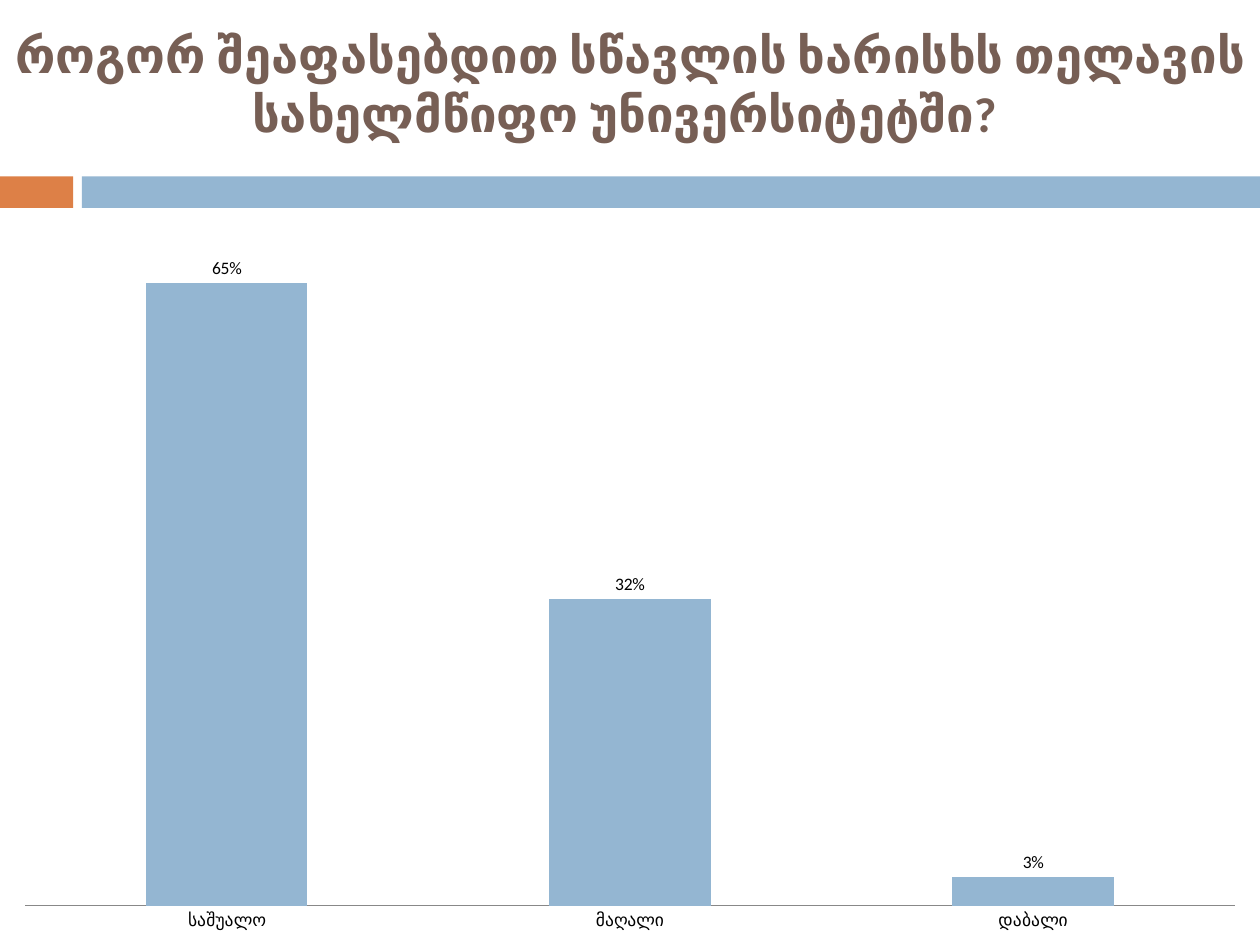
from pptx import Presentation
from pptx.chart.data import CategoryChartData
from pptx.dml.color import RGBColor
from pptx.enum import chart as charts, shapes, text
from pptx.util import Inches, Pt

# Content
TITLE = "როგორ შეაფასებდით სწავლის ხარისხს თელავის სახელმწიფო უნივერსიტეტში? "
RATINGS = {"საშუალო": 0.65, "მაღალი": 0.32, "დაბალი": 0.03}

# Style
FONT = "Calibri"
ORANGE = RGBColor(0xDD, 0x80, 0x47)
BLUE = RGBColor(0x94, 0xB6, 0xD2)
BROWN = RGBColor(0x77, 0x5F, 0x55)
BLACK = RGBColor(0, 0, 0)
GREY = RGBColor(0x88, 0x88, 0x88)
WIDTH, HEIGHT = 10, 7.5
BAND_TOP, BAND_HEIGHT = 1.4, 0.25
BANDS = [(0, 0.58, ORANGE), (0.65, WIDTH, BLUE)]  # left, right, colour
CHART_TOP = 1.75


def set_format(target, color, **values):
    for name, value in values.items():
        setattr(target, name, value)
    target.color.rgb = color


presentation = Presentation()
presentation.slide_width, presentation.slide_height = Inches(WIDTH), Inches(HEIGHT)
slide = presentation.slides.add_slide(presentation.slide_layouts[5])

# Divider bands
for left, right, color in BANDS:
    band = slide.shapes.add_shape(
        shapes.MSO_SHAPE.RECTANGLE, Inches(left), Inches(BAND_TOP),
        Inches(right - left), Inches(BAND_HEIGHT))
    band.shadow.inherit = False
    band.fill.solid()
    band.fill.fore_color.rgb = color
    band.line.fill.background()

# Title
title = slide.shapes.title
title.left, title.top = Inches(0), Inches(0)
title.width, title.height = Inches(WIDTH), Inches(1.33)
frame = title.text_frame
frame.text = TITLE
frame.word_wrap = True
frame.auto_size = text.MSO_AUTO_SIZE.NONE
frame.vertical_anchor = text.MSO_ANCHOR.MIDDLE
paragraph = frame.paragraphs[0]
paragraph.alignment = text.PP_ALIGN.CENTER
set_format(paragraph.runs[0].font, BROWN, name=FONT, size=Pt(28), bold=True)

# Column chart
data = CategoryChartData(number_format="0%")
data.categories = list(RATINGS)
data.add_series("Series 1", list(RATINGS.values()))
chart = slide.shapes.add_chart(
    charts.XL_CHART_TYPE.COLUMN_CLUSTERED, Inches(0), Inches(CHART_TOP),
    Inches(WIDTH), Inches(HEIGHT - CHART_TOP), data).chart
chart.has_legend = False
chart.has_title = False
set_format(chart.font, BLACK, name=FONT, size=Pt(10))

plot = chart.plots[0]
plot.gap_width, plot.overlap = 150, -25
plot.vary_by_categories = False
fill = plot.series[0].format.fill
fill.solid()
fill.fore_color.rgb = BLUE

plot.has_data_labels = True
labels = plot.data_labels
label_format = {
    "show_value": True,
    "number_format": "0%",
    "number_format_is_linked": False,
    "position": charts.XL_LABEL_POSITION.OUTSIDE_END,
}
for name, value in label_format.items():
    setattr(labels, name, value)

# Axes
category_axis, value_axis = chart.category_axis, chart.value_axis
category_axis.major_tick_mark = charts.XL_TICK_MARK.NONE
set_format(category_axis.format.line, GREY, width=Pt(0.75))
value_axis.has_major_gridlines = False
value_axis.minimum_scale, value_axis.maximum_scale = 0, 0.7
value_axis.visible = False

presentation.save("out.pptx")
